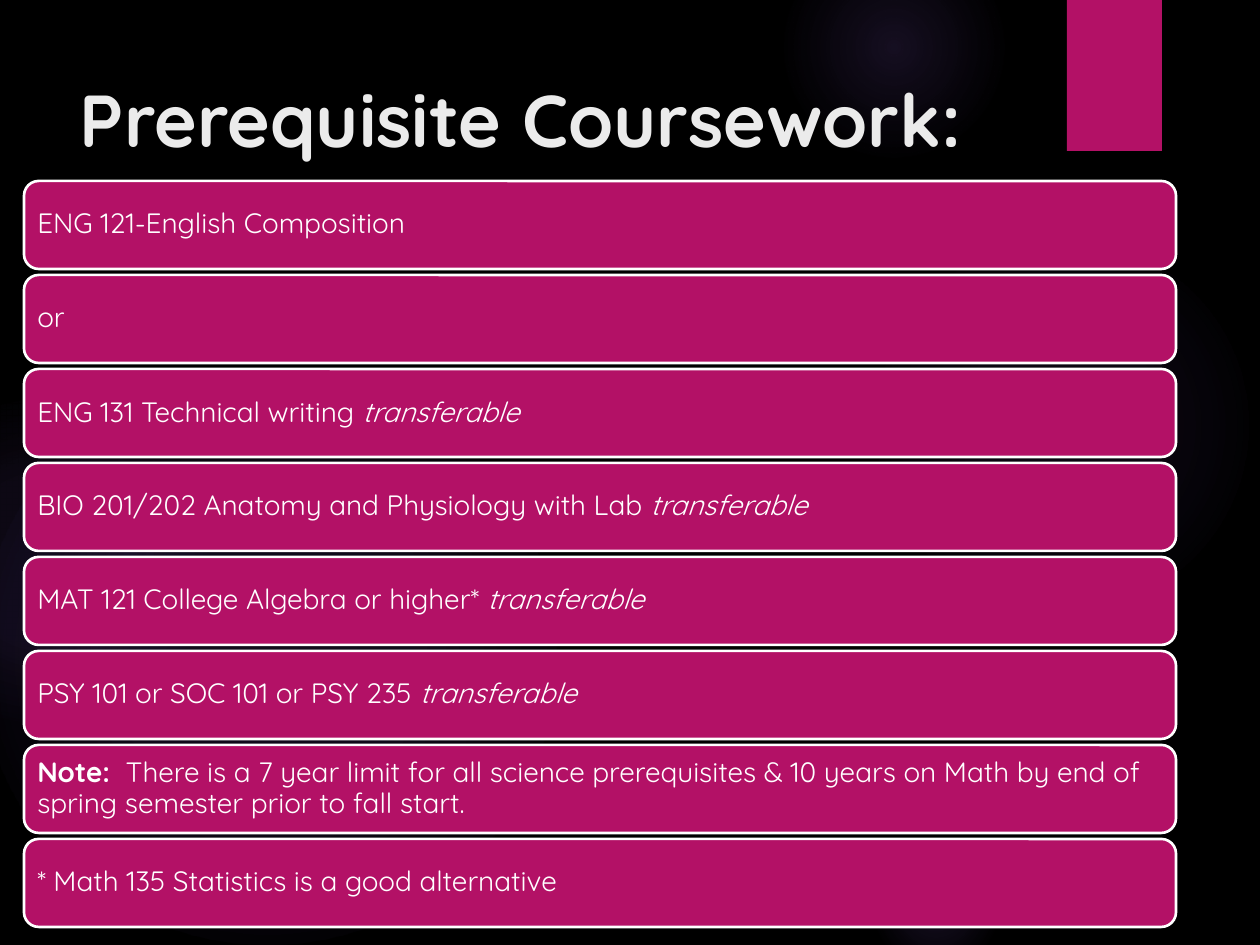
import pptx
import pptx.util
import pptx.oxml
import pptx.oxml.ns
import pptx.dml.color
import pptx.enum.shapes
import pptx.enum.text

COLORS = {"back": "000000", "glow": "9B6BF2", "pink": "B31166",
          "title": "EBEBEB", "white": "FFFFFF"}
FONT = "Quicksand"
TITLE = "Prerequisite Coursework:"
TAIL = ("transferable", "i")
ROWS = [
    [("ENG 121-English Composition", "")],
    [("or", "")],
    [("ENG 131 Technical writing ", ""), TAIL],
    [("BIO 201/202 Anatomy and Physiology with Lab ", ""), TAIL],
    [("MAT 121 College Algebra or higher* ", ""), TAIL],
    [("PSY 101 or SOC 101 or PSY 235 ", ""), TAIL],
    [("Note:  ", "b"),
     ("There is a 7 year limit for all science prerequisites & 10 years on "
      "Math by end of spring semester prior to fall start.", "")],
    [("* Math 135 Statistics is a good alternative", "")],
]
GLOWS = [
    (868, 231, 388, [(0, 7), (36, 6), (69, 0)]),
    (784, -63, 220, [(0, 14), (36, 7), (73, 0)]),
    (868, 840, 136, [(0, 14), (36, 7), (66, 0)]),
    (-21, 368, 577, [(0, 11), (36, 10), (75, 0)]),
    (-116, 399, 325, [(0, 8), (36, 8), (72, 0)]),
]
LEFT, TOP, WIDE, HIGH, STEP = 24, 181, 1152, 88, 94
SCALE = 914400 / 126
KIND = pptx.enum.shapes.MSO_SHAPE


def px(num):
    return pptx.util.Emu(round(num * SCALE))


def color(name):
    return pptx.dml.color.RGBColor.from_string(COLORS[name])


def add_shape(slide, kind, box, fill=None):
    shape = slide.shapes.add_shape(kind, *map(px, box))
    shape.shadow.inherit = False
    shape.line.fill.background()
    if fill:
        shape.fill.solid()
        shape.fill.fore_color.rgb = color(fill)
    return shape


def add_glow(slide, left, top, size, stops):
    shape = add_shape(slide, KIND.OVAL, (left, top, size, size))
    shape.fill.background()
    marks = "".join(
        f'<a:gs pos="{pos * 1000}"><a:srgbClr val="{COLORS["glow"]}">'
        f'<a:alpha val="{alpha * 1000}"/></a:srgbClr></a:gs>'
        for pos, alpha in stops)
    grad = pptx.oxml.parse_xml(
        f'<a:gradFill {pptx.oxml.ns.nsdecls("a")} rotWithShape="1">'
        f'<a:gsLst>{marks}</a:gsLst><a:path path="circle">'
        '<a:fillToRect l="50000" t="50000" r="50000" b="50000"/>'
        '</a:path></a:gradFill>')
    props = shape.element.spPr
    props.replace(props.find(pptx.oxml.ns.qn("a:noFill")), grad)


def add_text(shape, runs, size, tone, pad):
    frame = shape.text_frame
    frame.word_wrap = True
    frame.vertical_anchor = pptx.enum.text.MSO_ANCHOR.MIDDLE
    frame.margin_left = frame.margin_right = px(pad)
    frame.margin_top = frame.margin_bottom = px(9)
    para = frame.paragraphs[0]
    para.alignment = pptx.enum.text.PP_ALIGN.LEFT
    for text, style in runs:
        run = para.add_run()
        run.text = text
        font = run.font
        font.name = FONT
        font.size = pptx.util.Pt(size)
        font.color.rgb = color(tone)
        font.bold = "b" in style
        font.italic = "i" in style
    return para


def main():
    deck = pptx.Presentation()
    deck.slide_width, deck.slide_height = px(1260), px(945)
    slide = deck.slides.add_slide(deck.slide_layouts[6])
    back = slide.background.fill
    back.solid()
    back.fore_color.rgb = color("back")

    for glow in GLOWS:
        add_glow(slide, *glow)
    add_shape(slide, KIND.RECTANGLE, (1067, 0, 95, 151), "pink")

    head = slide.shapes.add_textbox(*map(px, (67, 63, 973, 111)))
    add_text(head, [(TITLE, "b")], 42, "title", 13)

    for num, runs in enumerate(ROWS):
        box = (LEFT, TOP + num * STEP, WIDE, HIGH)
        bar = add_shape(slide, KIND.ROUNDED_RECTANGLE, box, "pink")
        bar.line.color.rgb = color("white")
        bar.line.width = pptx.util.Pt(1.5)
        para = add_text(bar, runs, 16, "white", 9)
        para.line_spacing = 0.9

    deck.save("out.pptx")


if __name__ == "__main__":
    main()
